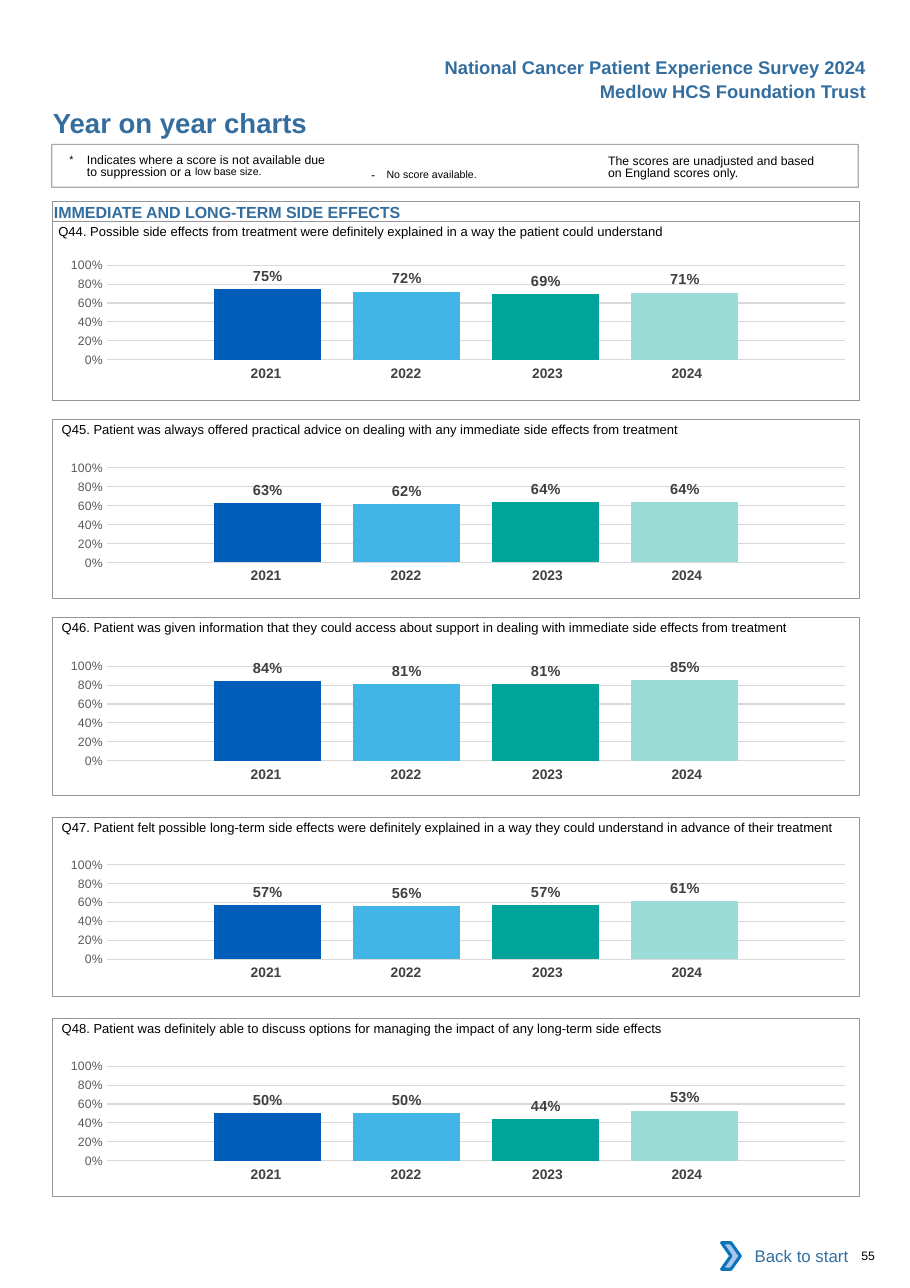
"""Build the survey page of year on year charts for side effects."""
from lxml import etree
from pptx import Presentation
from pptx.chart.data import CategoryChartData
from pptx.dml.color import RGBColor
from pptx.enum.chart import XL_CHART_TYPE, XL_LABEL_POSITION, XL_TICK_MARK
from pptx.enum.shapes import MSO_SHAPE
from pptx.enum.text import MSO_ANCHOR, PP_ALIGN
from pptx.oxml import parse_xml
from pptx.oxml.ns import qn
from pptx.util import Inches, Pt

COLUMNS = XL_CHART_TYPE.COLUMN_CLUSTERED
OUTSIDE = XL_LABEL_POSITION.OUTSIDE_END
NO_TICK = XL_TICK_MARK.NONE
RECT, CHEVRON = MSO_SHAPE.RECTANGLE, MSO_SHAPE.CHEVRON
LEFT, CENTER, RIGHT = PP_ALIGN.LEFT, PP_ALIGN.CENTER, PP_ALIGN.RIGHT
MIDDLE = MSO_ANCHOR.MIDDLE

WIDTH, HEIGHT = 8.26, 11.69
FRAME_LEFT, FRAME_WIDTH, FRAME_HEIGHT = 0.48, 7.32, 1.62
CHART_LEFT, CHART_HEIGHT = 0.39, 1.29
YEARS_LEFT, YEARS_DROP, YEARS_HEIGHT = 1.73, 1.05, 0.27
BLUE, BLACK, GREY, WHITE = "336E9F", "000000", "939598", "FFFFFF"
NO_STYLE = "{2D5ABB26-0587-4C30-8999-92F81FD0307C}"
PLOT_AREA = {"x": 0.08, "y": 0.145, "w": 0.915, "h": 0.666}

HEADINGS = [("National Cancer Patient Experience Survey 2024", 0.46),
            ("Medlow HCS Foundation Trust", 0.68)]
TITLE = "Year on year charts"
SECTION = "IMMEDIATE AND LONG-TERM SIDE EFFECTS"
BACK, PAGE = "Back to start", "55"

# (text, size, extra run attributes)
SUPPRESSED = [("*\t", 12, {"baseline": "3000"}),
              ("Indicates where a score is not available due to suppression or a ", 8, {}),
              ("low base size.", 12, {"baseline": "7000"})]
NO_SCORE = [("- ", 8, {"spc": "260"}),
            ("No score available.", 12, {"baseline": "3000"})]
UNADJUSTED = [("The scores are unadjusted and based on England scores only.", 8, {})]

# (year, bar colour, column width, right margin of the year)
YEARS = [("2021", "005EB8", 1.27, 0), ("2022", "41B6E6", 1.27, 0),
         ("2023", "00A499", 1.34, 0.04), ("2024", "9CDCD7", 1.27, 0.12)]

# (question, text left, frame top, chart top, score by year)
PANELS = [
    ("Q44. Possible side effects from treatment were definitely explained in a way "
     "the patient could understand", 0.53, 2.01, 2.22, (0.75, 0.72, 0.69, 0.71)),
    ("Q45. Patient was always offered practical advice on dealing with any immediate "
     "side effects from treatment", 0.56, 3.81, 4.06, (0.63, 0.62, 0.64, 0.64)),
    ("Q46. Patient was given information that they could access about support in dealing "
     "with immediate side effects from treatment", 0.56, 5.6, 5.86, (0.84, 0.81, 0.81, 0.85)),
    ("Q47. Patient felt possible long-term side effects were definitely explained in a way "
     "they could understand in advance of their treatment",
     0.56, 7.42, 7.66, (0.57, 0.56, 0.57, 0.61)),
    ("Q48. Patient was definitely able to discuss options for managing the impact of any "
     "long-term side effects", 0.56, 9.24, 9.49, (0.5, 0.5, 0.44, 0.53)),
]


def rgb(value):
    return RGBColor.from_string(value)


def style(font, size, color, bold=False):
    font.name, font.size, font.bold = "Arial", Pt(size), bold
    font.color.rgb = rgb(color)


def set_margins(item, left=0, top=0, right=0, bottom=0):
    item.margin_left, item.margin_top = Inches(left), Inches(top)
    item.margin_right, item.margin_bottom = Inches(right), Inches(bottom)


def add_text(slide, box, runs, color=BLACK, bold=False, align=LEFT,
             margins=(0, 0, 0, 0), wrap=True):
    tf = slide.shapes.add_textbox(*map(Inches, box)).text_frame
    tf.word_wrap = wrap
    set_margins(tf, *margins)
    p = tf.paragraphs[0]
    p.alignment = align
    for text, size, extra in runs:
        r = p.add_run()
        r.text = text
        style(r.font, size, color, bold)
        for key, value in extra.items():
            r.font._element.set(key, value)
    return p


def add_box(slide, box, kind=RECT, fill=None, line=None, weight=0.5):
    sp = slide.shapes.add_shape(kind, *map(Inches, box))
    sp.shadow.inherit = False
    if fill:
        sp.fill.solid()
        sp.fill.fore_color.rgb = rgb(fill)
    else:
        sp.fill.background()
    if line:
        sp.line.color.rgb = rgb(line)
        sp.line.width = Pt(weight)
    else:
        sp.line.fill.background()
    return sp


def place_plot(chart):
    area = chart._chartSpace.chart.plotArea
    for old in area.findall(qn("c:layout")):
        area.remove(old)
    fields = [("layoutTarget", "inner"), ("xMode", "edge"), ("yMode", "edge"),
              *PLOT_AREA.items()]
    body = "".join(f'<c:{name} val="{value}"/>' for name, value in fields)
    area.insert(0, parse_xml(
        '<c:layout xmlns:c="http://schemas.openxmlformats.org/drawingml/2006/chart">'
        f'<c:manualLayout>{body}</c:manualLayout></c:layout>'))


def add_score_chart(slide, top, scores):
    data = CategoryChartData(number_format="0%")
    data.categories = ["1"]
    for (year, *_), score in zip(YEARS, scores):
        data.add_series(year, [score])
    box = (CHART_LEFT, top, FRAME_WIDTH, CHART_HEIGHT)
    chart = slide.shapes.add_chart(COLUMNS, *map(Inches, box), data).chart
    chart.has_legend = chart.has_title = False
    chart.font.name, chart.font.size = "Calibri", Pt(10)
    chart.category_axis.visible = False
    axis = chart.value_axis
    axis.minimum_scale, axis.maximum_scale, axis.major_unit = 0, 1, 0.2
    axis.major_tick_mark = axis.minor_tick_mark = NO_TICK
    axis.format.line.fill.background()
    axis.major_gridlines.format.line.color.rgb = rgb("D9D9D9")
    axis.major_gridlines.format.line.width = Pt(0.75)
    style(axis.tick_labels.font, 8, "595959")
    axis.tick_labels.number_format = "0%"
    axis.tick_labels.number_format_is_linked = False
    plot = chart.plots[0]
    plot.gap_width, plot.overlap, plot.vary_by_categories = 200, -30, False
    for series, (_, color, *_) in zip(plot.series, YEARS):
        series.format.fill.solid()
        series.format.fill.fore_color.rgb = rgb(color)
        labels = series.data_labels
        labels.show_value, labels.position = True, OUTSIDE
        labels.number_format, labels.number_format_is_linked = "0%", False
        style(labels.font, 9.5, "404040", True)
    place_plot(chart)


def add_years(slide, top):
    box = (YEARS_LEFT, top, sum(y[2] for y in YEARS), YEARS_HEIGHT)
    table = slide.shapes.add_table(1, len(YEARS), *map(Inches, box)).table
    table.first_row = table.horz_banding = False
    table._tbl.tblPr.find(qn("a:tableStyleId")).text = NO_STYLE
    for i, (year, _, width, right) in enumerate(YEARS):
        table.columns[i].width = Inches(width)
        cell = table.cell(0, i)
        cell.fill.background()
        set_margins(cell, 0.1, 0.05, right, 0.05)
        p = cell.text_frame.paragraphs[0]
        p.text, p.alignment = year, CENTER
        style(p.runs[0].font, 9, "414042", True)


def add_notes(slide):
    frame = add_box(slide, (0.47, 1.31, FRAME_WIDTH, 0.39), line=GREY, weight=0.75)
    color = next(frame.line._ln.iter(qn("a:srgbClr")))
    etree.SubElement(color, qn("a:alpha")).set("val", "80000")
    hanging = add_text(slide, (0.63, 1.38, 2.36, 0.27), SUPPRESSED, margins=(0, 0.03, 0, 0))
    hanging._p.get_or_add_pPr().set("marL", str(Inches(0.16)))
    hanging._p.get_or_add_pPr().set("indent", str(-Inches(0.16)))
    add_text(slide, (3.27, 1.41, 1.83, 0.24), NO_SCORE, margins=(0.1, 0.05, 0.1, 0.05))
    plain = add_text(slide, (5.52, 1.38, 1.95, 0.27), UNADJUSTED, margins=(0, 0.03, 0, 0))
    hanging.line_spacing = plain.line_spacing = Pt(8.1)


def add_footer(slide):
    sp = add_box(slide, (6.62, 11.19, 1.18, 0.42), fill=WHITE)
    tf = sp.text_frame
    tf.vertical_anchor = MIDDLE
    p = tf.paragraphs[0]
    p.text, p.alignment = BACK, RIGHT
    style(p.runs[0].font, 11, BLUE)
    add_box(slide, (6.55, 11.28, 0.17, 0.24), CHEVRON, "A8C7E9", "0A74BB", 2)
    add_text(slide, (7.72, 11.33, 0.51, 0.13), [(PAGE, 8, {})], margins=(0.1, 0, 0, 0))


def main():
    prs = Presentation()
    prs.slide_width, prs.slide_height = Inches(WIDTH), Inches(HEIGHT)
    slide = prs.slides.add_slide(prs.slide_layouts[6])
    for text, top in HEADINGS:
        add_text(slide, (3.92, top, 4.04, 0.3), [(text, 12, {})], BLUE, True, RIGHT,
                 (0.1, 0.05, 0.1, 0.05))
    add_text(slide, (0.48, 0.96, 4.5, 0.3), [(TITLE, 18, {})], BLUE, True)
    add_notes(slide)
    add_box(slide, (FRAME_LEFT, 1.83, FRAME_WIDTH, 0.18), line=GREY)
    add_text(slide, (FRAME_LEFT, 1.83, FRAME_WIDTH, 0.18), [(SECTION, 10.5, {})], BLUE, True,
             margins=(0.01, 0.01, 0, 0))
    for question, left, top, chart_top, scores in PANELS:
        add_text(slide, (left, top - 0.07, 7.25, 0.24), [(question, 8.5, {})],
                 margins=(0, 0.09, 0, 0))
        add_years(slide, chart_top + YEARS_DROP)
        add_score_chart(slide, chart_top, scores)
        add_box(slide, (FRAME_LEFT, top, FRAME_WIDTH, FRAME_HEIGHT), line=GREY)
    add_footer(slide)
    prs.save("out.pptx")


if __name__ == "__main__":
    main()
